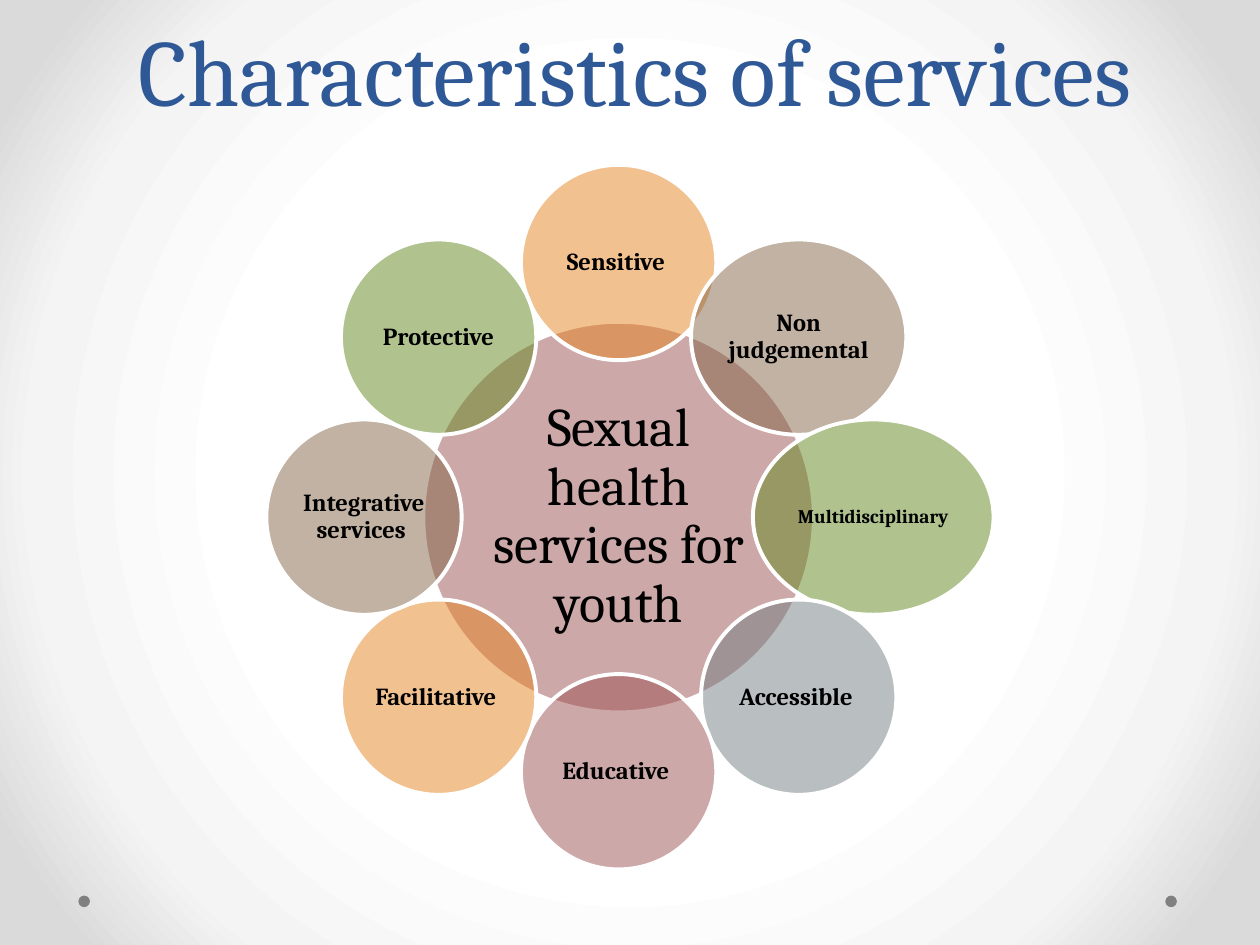
import math

import lxml.etree
import pptx
import pptx.dml.color
import pptx.enum.shapes
import pptx.enum.text
import pptx.oxml
import pptx.oxml.ns
import pptx.util

Pt = pptx.util.Pt
OVAL = pptx.enum.shapes.MSO_SHAPE.OVAL
ANCHOR = pptx.enum.text.MSO_ANCHOR
FONT = "Cambria"

# label, fill, width, text size; clockwise from the top
PETALS = [
    ("Sensitive ", "E68422", 111.6, 14),
    ("Non judgemental", "846648", 123, 14),
    ("Multidisciplinary", "63891F", 137.5, 11),
    ("Accessible ", "758085", 111.6, 14),
    ("Educative ", "9C5252", 111.6, 14),
    ("Facilitative ", "E68422", 111.6, 14),
    ("Integrative services ", "846648", 111.6, 14),
    ("Protective", "63891F", 111.6, 14),
]
PETAL_HEIGHT = 111.6
HUB_DIAMETER = 223.2
BACKGROUND_STOPS = [(50, "FFFFFF"), (76, "F4F4F4"), (92, "DADADA")]


def color(value):
    return pptx.dml.color.RGBColor.from_string(value)


def write_text(frame, text, size, hex_color, bold, line_spacing, anchor, inset):
    frame.word_wrap = True
    frame.vertical_anchor = anchor
    frame.margin_left = frame.margin_right = Pt(inset)
    frame.margin_top = frame.margin_bottom = Pt(inset)
    paragraph = frame.paragraphs[0]
    paragraph.alignment = pptx.enum.text.PP_ALIGN.CENTER
    paragraph.line_spacing = line_spacing
    run = paragraph.add_run()
    run.text = text
    run.font.name = FONT
    run.font.size = Pt(size)
    run.font.bold = bold
    run.font.color.rgb = color(hex_color)


def add_oval(shapes, left, top, width, height, fill):
    shape = shapes.add_shape(OVAL, Pt(left), Pt(top), Pt(width), Pt(height))
    shape.shadow.inherit = False
    shape.fill.solid()
    shape.fill.fore_color.rgb = color(fill)
    shape.line.fill.background()
    return shape


def add_background(slide):
    stops = "".join(
        f'<a:gs pos="{position * 1000}"><a:srgbClr val="{value}"/></a:gs>'
        for position, value in BACKGROUND_STOPS
    )
    background = pptx.oxml.parse_xml(
        f'<p:bg {pptx.oxml.ns.nsdecls("p", "a")}><p:bgPr>'
        f'<a:gradFill rotWithShape="1"><a:gsLst>{stops}</a:gsLst>'
        '<a:path path="circle"><a:fillToRect l="50000" t="50000" r="50000" b="50000"/></a:path>'
        "</a:gradFill><a:effectLst/></p:bgPr></p:bg>"
    )
    slide.element.cSld.insert(0, background)


def add_corner_dots(slide, left, top, width, diameter):
    for dot_left in (left + width - diameter, left):
        add_oval(slide.shapes, dot_left, top, diameter, diameter, "808080")


def add_disc(shapes, center_x, center_y, width, height, fill, text, size, bold, inset):
    disc = add_oval(shapes, center_x - width / 2, center_y - height / 2, width, height, fill)
    # Half-transparent fill
    fill_color = disc.element.spPr.find(".//" + pptx.oxml.ns.qn("a:srgbClr"))
    lxml.etree.SubElement(fill_color, pptx.oxml.ns.qn("a:alpha"), val="50000")
    disc.line.color.rgb = color("FFFFFF")
    disc.line.width = Pt(2.25)
    write_text(disc.text_frame, text, size, "000000", bold, 0.9, ANCHOR.MIDDLE, inset)


def add_radial_venn(slide, left, top, width, height):
    shapes = slide.shapes.add_group_shape().shapes
    center_x, center_y = left + width / 2, top + height / 2
    orbit = (height - PETAL_HEIGHT) / 2
    # Hub
    add_disc(shapes, center_x, center_y, HUB_DIAMETER, HUB_DIAMETER, "9C5252",
             "Sexual health services for youth", 31, False, 2.9)
    # Petals, evenly spaced around the hub
    for index, (label, fill, petal_width, size) in enumerate(PETALS):
        angle = 2 * math.pi * index / len(PETALS)
        add_disc(shapes, center_x + orbit * math.sin(angle), center_y - orbit * math.cos(angle),
                 petal_width, PETAL_HEIGHT, fill, label, size, True, 1.4)


def add_title(slide, left, top, width, height):
    box = slide.shapes.add_textbox(Pt(left), Pt(top), Pt(width), Pt(height))
    write_text(box.text_frame, "Characteristics of services ", 54, "2F5897", False,
               Pt(58), ANCHOR.BOTTOM, 3.6)
    box.text_frame.margin_left = box.text_frame.margin_right = Pt(7.2)


def main():
    presentation = pptx.Presentation()
    presentation.slide_width = Pt(720)
    presentation.slide_height = Pt(540)
    slide = presentation.slides.add_slide(presentation.slide_layouts[6])
    add_background(slide)
    add_corner_dots(slide, 44.8, 511.8, 627.7, 6.6)
    add_radial_venn(slide, 150.9, 94.2, 405.2, 402.6)
    add_title(slide, 48, 9.4, 641.5, 65.5)
    presentation.save("out.pptx")


if __name__ == "__main__":
    main()
